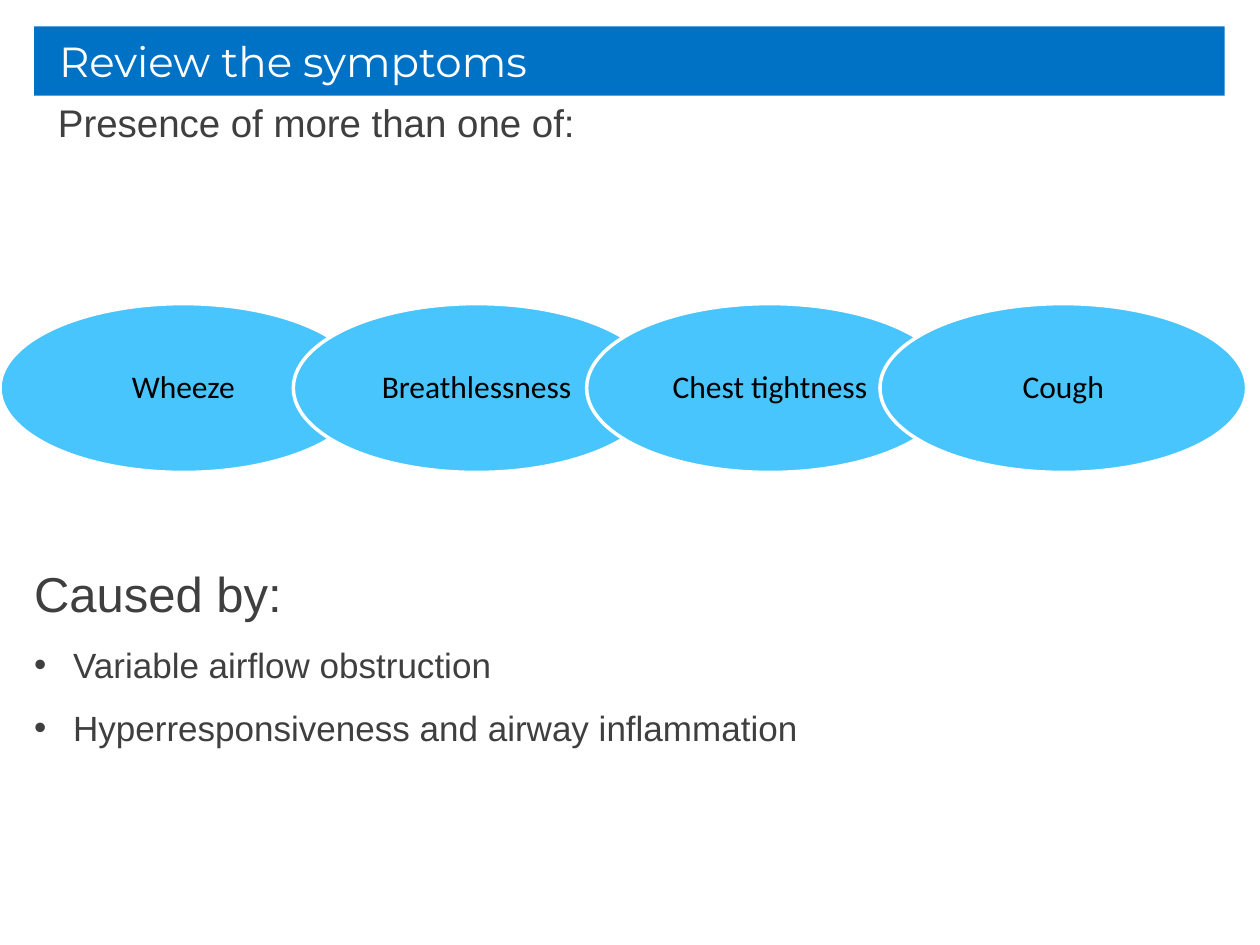
from lxml import etree
from pptx import Presentation
from pptx.dml.color import RGBColor
from pptx.enum.shapes import MSO_SHAPE
from pptx.enum.text import MSO_ANCHOR, PP_ALIGN
from pptx.oxml.ns import qn
from pptx.util import Inches, Pt

RECTANGLE, OVAL = MSO_SHAPE.RECTANGLE, MSO_SHAPE.OVAL
TOP, MIDDLE = MSO_ANCHOR.TOP, MSO_ANCHOR.MIDDLE
LEFT, CENTER = PP_ALIGN.LEFT, PP_ALIGN.CENTER

COLORS = {
    "banner": "0072C6",
    "symptom": "49C5FD",
    "white": "FFFFFF",
    "body": "3F3F3F",
    "black": "000000",
}
MARGIN, CONTENT_WIDTH = 0.27, 9.45
OVAL_WIDTH, OVAL_HEIGHT, OVAL_TOP = 2.91, 1.34, 2.41
OVAL_STEP = OVAL_WIDTH * 0.8
SYMPTOMS = ["Wheeze", "Breathlessness", "Chest tightness", "Cough"]
CAUSES = ["Variable airflow obstruction", "Hyperresponsiveness and airway inflammation"]


def write(frame, text, size, font="Arial", color="body", align=LEFT, anchor=TOP,
          insets=(0, 0, 0, 0), indent=0, bullet=False, before=0, after=0, spacing=1.0):
    """Add one paragraph, using the frame's first one while it is still empty."""
    frame.word_wrap = True
    frame.vertical_anchor = anchor
    (frame.margin_left, frame.margin_top,
     frame.margin_right, frame.margin_bottom) = map(Inches, insets)
    paragraph = frame.add_paragraph() if frame.text else frame.paragraphs[0]
    paragraph.alignment = align
    paragraph.space_before, paragraph.space_after = Pt(before), Pt(after)
    paragraph.line_spacing = spacing
    run = paragraph.add_run()
    run.text = text
    run.font.name, run.font.size = font, Pt(size)
    run.font.color.rgb = RGBColor.from_string(COLORS[color])
    properties = paragraph._p.get_or_add_pPr()
    properties.set("marL", str(Inches(indent)))
    properties.set("indent", str(Inches(-indent if bullet else 0)))
    if bullet:
        etree.SubElement(properties, qn("a:buFont"), typeface="Arial")
        etree.SubElement(properties, qn("a:buChar"), char="•")


def add_panel(kind, left, top, width, height, fill):
    panel = slide.shapes.add_shape(kind, *map(Inches, (left, top, width, height)))
    panel.shadow.inherit = False
    panel.fill.solid()
    panel.fill.fore_color.rgb = RGBColor.from_string(COLORS[fill])
    panel.line.fill.background()
    return panel


prs = Presentation()
prs.slide_width, prs.slide_height = Inches(10), Inches(7.5)
slide = prs.slides.add_slide(prs.slide_layouts[6])

# Title banner
banner = add_panel(RECTANGLE, MARGIN, 0.21, CONTENT_WIDTH, 0.55, "banner")
write(banner.text_frame, "Review the symptoms", 24, font="Montserrat", color="white",
      anchor=MIDDLE, insets=(0.1, 0, 0.1, 0), indent=0.1)

# Lead-in
lead_in = slide.shapes.add_textbox(*map(Inches, (MARGIN, 0.76, CONTENT_WIDTH, 0.47)))
write(lead_in.text_frame, "Presence of more than one of:", 22,
      insets=(0, 0.03, 0, 0), indent=0.19)

# Causes
causes = slide.shapes.add_textbox(*map(Inches, (MARGIN, 4.47, CONTENT_WIDTH, 2.43)))
write(causes.text_frame, "Caused by:", 28, after=6)
for cause in CAUSES:
    write(causes.text_frame, cause, 20, indent=0.31, bullet=True, before=6, after=6)

# Overlapping symptoms
for column, symptom in enumerate(SYMPTOMS):
    oval = add_panel(OVAL, column * OVAL_STEP, OVAL_TOP, OVAL_WIDTH, OVAL_HEIGHT, "symptom")
    oval.line.color.rgb = RGBColor.from_string(COLORS["white"])
    oval.line.width = Pt(2)
    write(oval.text_frame, symptom, 18, font="Calibri", color="black",
          align=CENTER, anchor=MIDDLE, spacing=0.9)

prs.save("out.pptx")
